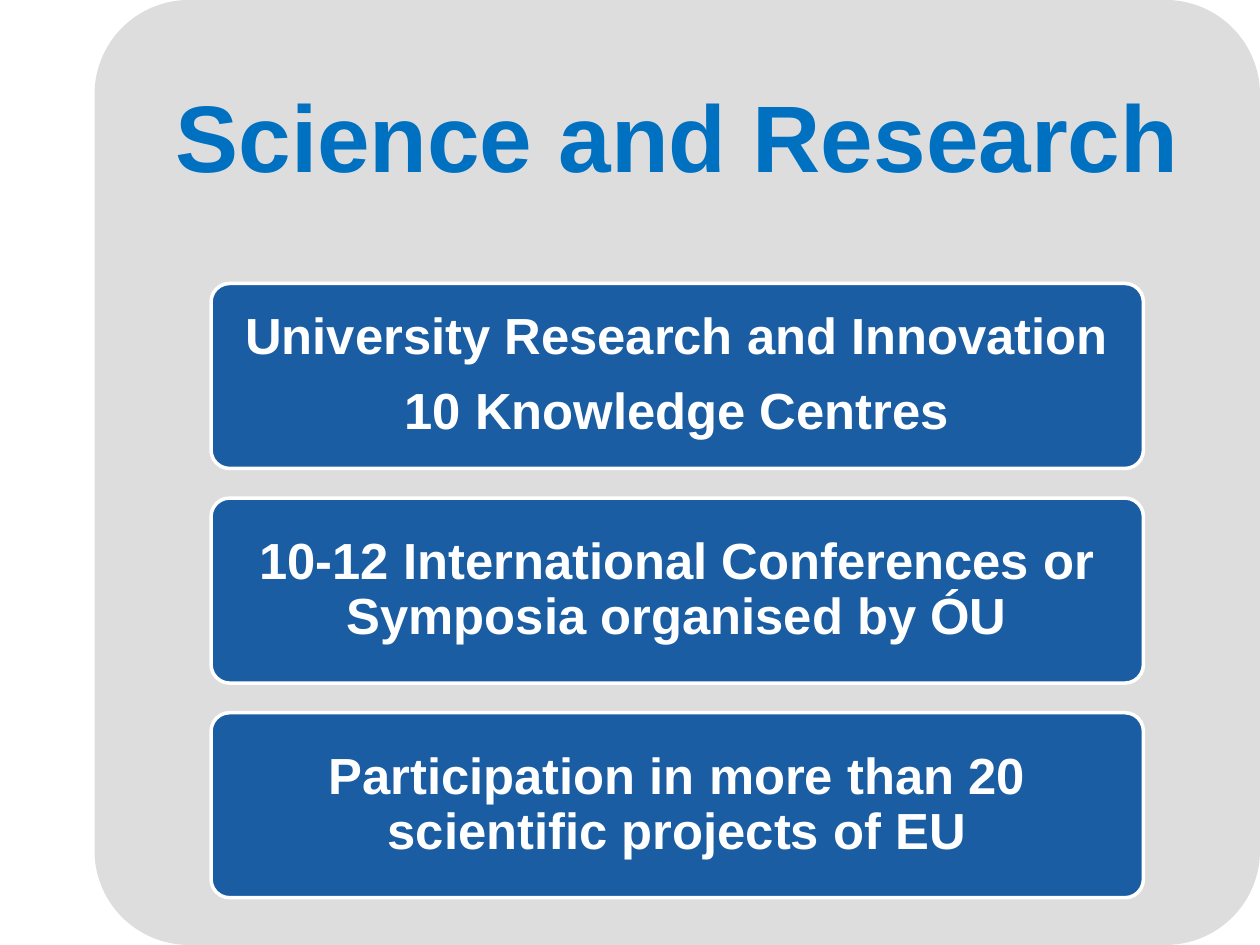
from collections import namedtuple
from dataclasses import dataclass

from pptx import Presentation
from pptx.dml.color import RGBColor
from pptx.enum.shapes import MSO_SHAPE
from pptx.enum.text import MSO_ANCHOR, MSO_AUTO_SIZE, PP_ALIGN
from pptx.util import Pt

Box = namedtuple("Box", "left top width height")


@dataclass(frozen=True)
class Theme:
    font: str = "Arial"
    panel: RGBColor = RGBColor(0xDD, 0xDD, 0xDD)
    title: RGBColor = RGBColor(0x00, 0x70, 0xC0)
    card: RGBColor = RGBColor(0x1A, 0x5D, 0xA2)
    white: RGBColor = RGBColor(0xFF, 0xFF, 0xFF)
    title_size: float = 54
    card_size: float = 29


THEME = Theme()
CORNER = 0.1
GAP_RATIO = 0.16
CARDS = [
    ["University Research and Innovation", "10 Knowledge Centres"],
    ["10-12 International Conferences or Symposia organised by ÓU"],
    ["Participation in more than 20 scientific projects of EU"],
]


def write_text(shape, lines, *, size, color, margin_x, margin_y):
    frame = shape.text_frame
    frame.word_wrap = True
    frame.auto_size = MSO_AUTO_SIZE.NONE
    frame.vertical_anchor = MSO_ANCHOR.MIDDLE
    frame.margin_left = frame.margin_right = Pt(margin_x)
    frame.margin_top = frame.margin_bottom = Pt(margin_y)
    frame.text = "\n".join(lines)
    for paragraph in frame.paragraphs:
        paragraph.alignment = PP_ALIGN.CENTER
        paragraph.line_spacing = 0.9
        paragraph.space_before = Pt(0)
        paragraph.space_after = Pt(round(size * 0.4, 1))
        font = paragraph.runs[0].font
        font.name = THEME.font
        font.size = Pt(size)
        font.bold = True
        font.color.rgb = color


def add_rounded_box(slide, box, fill):
    shape = slide.shapes.add_shape(MSO_SHAPE.ROUNDED_RECTANGLE, *map(Pt, box))
    shape.adjustments[0] = CORNER
    shape.shadow.inherit = False
    shape.fill.solid()
    shape.fill.fore_color.rgb = fill
    return shape


def add_panel(slide, box):
    panel = add_rounded_box(slide, box, THEME.panel)
    panel.line.fill.background()
    slide.shapes._spTree.insert(2, panel._element)


def place_title(slide, box):
    title = slide.shapes.title
    title.left, title.top, title.width, title.height = map(Pt, box)
    write_text(title, ["Science and Research"], size=THEME.title_size,
               color=THEME.title, margin_x=16.5, margin_y=16.5)


def add_cards(slide, box, cards):
    height = box.height / (len(cards) + (len(cards) - 1) * GAP_RATIO)
    pitch = height * (1 + GAP_RATIO)
    for index, lines in enumerate(cards):
        card_box = Box(box.left, box.top + index * pitch, box.width, height)
        card = add_rounded_box(slide, card_box, THEME.card)
        card.line.color.rgb = THEME.white
        card.line.width = Pt(2)
        write_text(card, lines, size=THEME.card_size, color=THEME.white,
                   margin_x=6, margin_y=4.5)


def build_slide(presentation, panel):
    slide = presentation.slides.add_slide(presentation.slide_layouts[5])
    add_panel(slide, panel)
    place_title(slide, panel._replace(height=panel.height * 0.3))
    card_area = Box(panel.left + panel.width * 0.1, panel.top + panel.height * 0.3,
                    panel.width * 0.8, panel.height * 0.65)
    add_cards(slide, card_area, CARDS)


def main():
    presentation = Presentation()
    presentation.slide_width = Pt(720)
    presentation.slide_height = Pt(540)
    build_slide(presentation, Box(54, 0, 666, 540))
    presentation.save("out.pptx")


if __name__ == "__main__":
    main()
